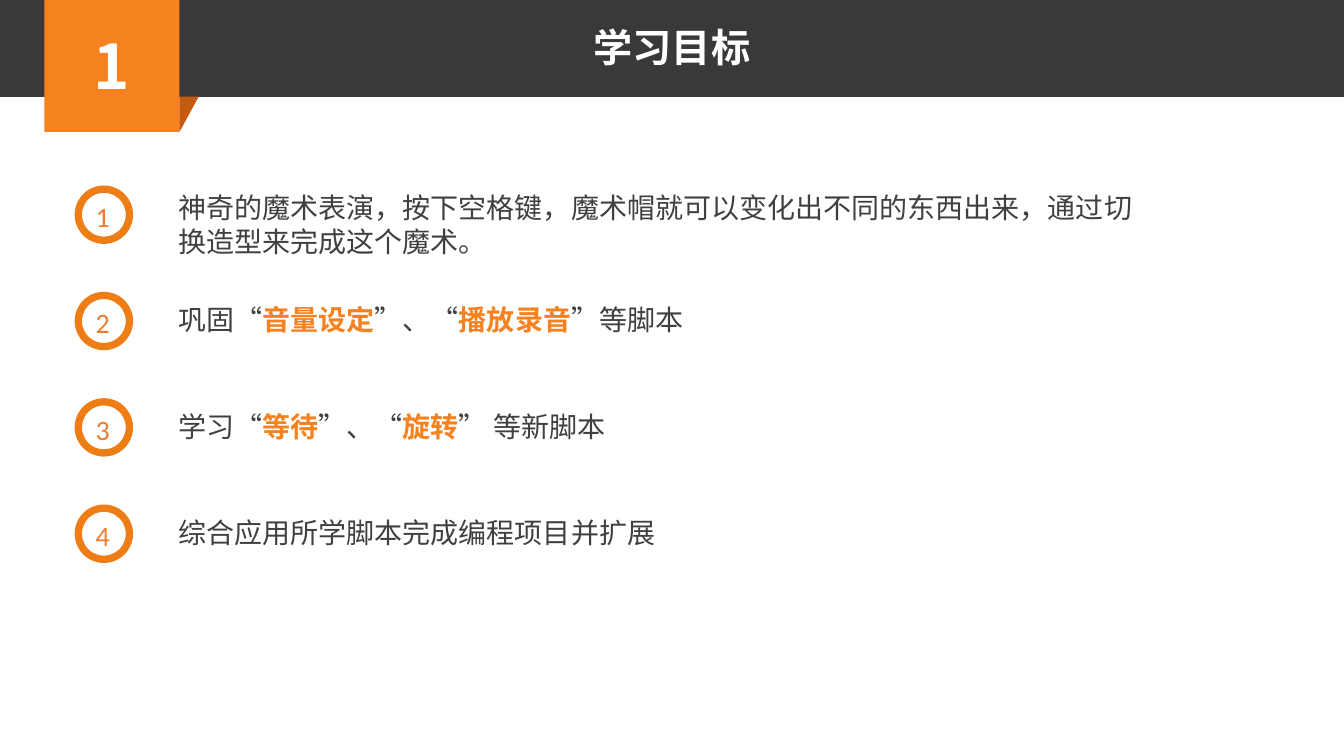
from pptx import Presentation
from pptx.dml.color import RGBColor
from pptx.enum.shapes import MSO_SHAPE
from pptx.enum.text import MSO_ANCHOR, PP_ALIGN
from pptx.oxml.ns import qn
from pptx.util import Inches, Pt

RECTANGLE, TRIANGLE, DONUT = MSO_SHAPE.RECTANGLE, MSO_SHAPE.RIGHT_TRIANGLE, MSO_SHAPE.DONUT
TOP, MIDDLE = MSO_ANCHOR.TOP, MSO_ANCHOR.MIDDLE
LEFT, CENTER = PP_ALIGN.LEFT, PP_ALIGN.CENTER

CJK_FONT, DIGIT_FONT = "Noto Sans CJK SC", "Calibri"
CHARCOAL, ORANGE, FOLD = "3A3838", "F5821F", "C55A11"
RING, DIGIT, BODY, WHITE = "EE7D16", "ED7D31", "404040", "FFFFFF"

GOALS = [
    ["神奇的魔术表演，按下空格键，魔术帽就可以变化出不同的东西出来，通过切换造型来完成这个魔术。"],
    ["巩固“", "音量设定", "”、“", "播放录音", "”等脚本"],
    ["学习“", "等待", "”、“", "旋转", "” 等新脚本"],
    ["综合应用所学脚本完成编程项目并扩展"],
]


def rgb(value):
    return RGBColor.from_string(value)


def add_block(slide, preset, left, top, width, height, color):
    block = slide.shapes.add_shape(
        preset, Inches(left), Inches(top), Inches(width), Inches(height))
    block.shadow.inherit = False
    block.fill.solid()
    block.fill.fore_color.rgb = rgb(color)
    block.line.fill.background()
    return block


def write(frame, parts, size, color, font=CJK_FONT, bold=False, align=LEFT,
          anchor=TOP, wrap=True):
    frame.word_wrap = wrap
    frame.vertical_anchor = anchor
    paragraph = frame.paragraphs[0]
    paragraph.alignment = align
    paragraph.font.size = Pt(size)
    paragraph.font.name = font
    paragraph.font.bold = bold
    paragraph.font.color.rgb = rgb(color)
    defaults = paragraph._p.pPr.find(qn("a:defRPr"))
    east_asian = defaults.makeelement(qn("a:ea"), {"typeface": font})
    defaults.find(qn("a:latin")).addnext(east_asian)
    for index, part in enumerate(parts):
        run = paragraph.add_run()
        run.text = part
        if index % 2:
            run.font.bold = True
            run.font.color.rgb = rgb(ORANGE)


def add_label(slide, left, top, width, height, parts, size, color, **style):
    label = slide.shapes.add_textbox(
        Inches(left), Inches(top), Inches(width), Inches(height))
    write(label.text_frame, parts, size, color, **style)


def add_header(slide, left, top, width, height):
    badge_left, badge_size = left + 0.44, 1.34
    add_block(slide, RECTANGLE, left, top, width, height, CHARCOAL)
    badge = add_block(slide, RECTANGLE, badge_left, top, badge_size, badge_size, ORANGE)
    write(badge.text_frame, ["1"], 44, WHITE, bold=True, align=CENTER, anchor=MIDDLE)
    fold = add_block(slide, TRIANGLE, badge_left + badge_size, top + height,
                     0.19, badge_size - height, FOLD)
    fold._element.spPr.find(qn("a:xfrm")).set("flipV", "1")
    add_label(slide, left + 4.48, top + 0.21, 4.37, 0.57, ["学习目标"], 28, WHITE,
              bold=True, align=CENTER)


def add_goal(slide, left, top, width, number, parts):
    ring = add_block(slide, DONUT, left, top, 0.58, 0.58, RING)
    ring.adjustments[0] = 0.125
    add_label(slide, left + 0.11, top + 0.09, 0.36, 0.44, [str(number)], 20, DIGIT,
              font=DIGIT_FONT, wrap=False)
    text_top, text_height = (top, 0.77) if number == 1 else (top + 0.06, 0.44)
    add_label(slide, left + 0.93, text_top, width - 0.93, text_height, parts, 20, BODY)


def add_goals(slide, left, top, width, pitch):
    for index, parts in enumerate(GOALS):
        add_goal(slide, left, top + index * pitch, width, index + 1, parts)


def main():
    deck = Presentation()
    deck.slide_width, deck.slide_height = Inches(13.33), Inches(7.5)
    slide = deck.slides.add_slide(deck.slide_layouts[6])
    add_header(slide, 0, -0.03, 13.33, 0.99)
    add_goals(slide, 0.74, 1.84, 10.68, 1.055)
    deck.save("out.pptx")


if __name__ == "__main__":
    main()
